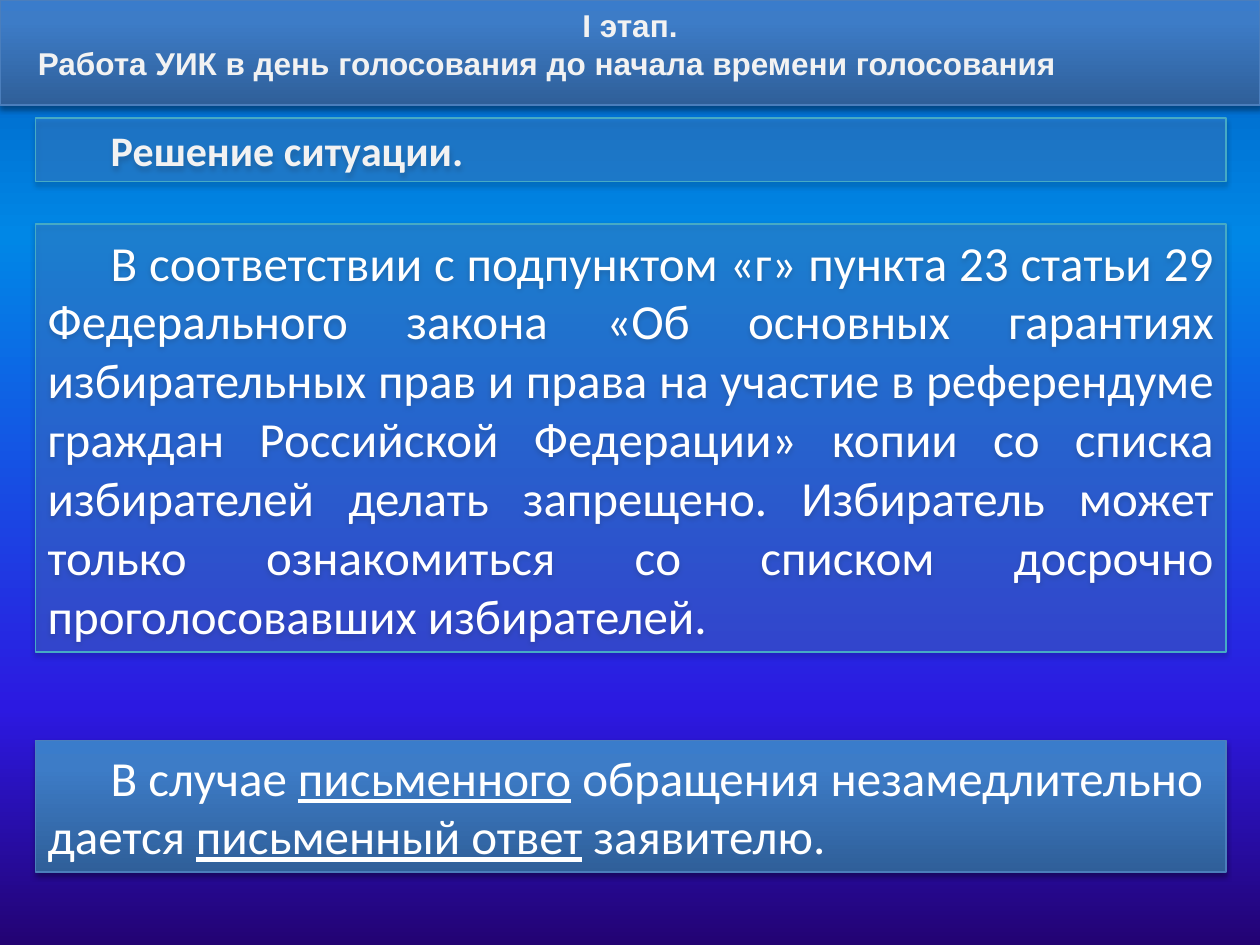
from dataclasses import dataclass

from lxml.etree import SubElement
from pptx import Presentation
from pptx.dml.color import RGBColor
from pptx.enum.shapes import MSO_SHAPE
from pptx.enum.text import MSO_ANCHOR, MSO_AUTO_SIZE, PP_ALIGN
from pptx.oxml.ns import qn
from pptx.util import Emu, Inches, Pt

COLORS = {
    "white": "FFFFFF", "pale": "F2F2F2", "shadow": "000000",
    "glass": "558ED5", "glass_line": "46AAC5", "solid_line": "4B7EBC",
}
BACKGROUND = [(0, "230373"), (25, "2C19E1"), (75, "0087E6"), (100, "005CBF")]
PANEL = [(0, "2F5F99"), (80, "3D7CC7"), (100, "3A7CCB")]
WIDTH, HEIGHT = Inches(10), Inches(7.5)
LEFT, SPAN = 2.8, 94.5  # text panels, percent of slide width

HEADING = {"size": Pt(18), "name": "Arial", "bold": True}
LEAD = {"size": Pt(24), "name": "Calibri", "bold": True}
BODY = {"size": Pt(28), "name": "Calibri", "bold": False}


@dataclass
class Line:
    """A paragraph; every second piece of text is underlined."""
    pieces: list[str]
    align: PP_ALIGN
    margin: float = 0
    indent: float = 0


@dataclass
class Panel:
    """A framed text; top and height are percent of slide height."""
    top: float
    height: float
    lines: list[Line]
    font: dict
    color: str
    glass: bool
    left: float = LEFT
    width: float = SPAN


TITLE = Panel(0, 9.47, [
    Line(["I этап."], PP_ALIGN.CENTER),
    Line(["Работа УИК в день голосования до начала времени голосования"],
         PP_ALIGN.LEFT, margin=0.2),
], HEADING, "pale", glass=False, left=0, width=100)

PANELS = [
    Panel(23.7, 45.3, [Line([
        "В соответствии с подпунктом «г» пункта 23 статьи 29 Федерального "
        "закона «Об основных гарантиях избирательных прав и права на участие "
        "в референдуме граждан Российской Федерации» копии со списка "
        "избирателей делать запрещено. Избиратель может только ознакомиться "
        "со списком досрочно проголосовавших избирателей."],
        PP_ALIGN.JUSTIFY, indent=0.5)], BODY, "white", glass=True),
    Panel(78.4, 13.9, [Line([
        "В случае ", "письменного", " обращения незамедлительно дается ",
        "письменный ответ", " заявителю."],
        PP_ALIGN.LEFT, indent=0.5)], BODY, "white", glass=False),
    Panel(12.5, 6.7, [Line(["Решение ситуации."], PP_ALIGN.JUSTIFY, indent=0.5)],
          LEAD, "pale", glass=True),
]


def rgb(name: str) -> RGBColor:
    return RGBColor.from_string(COLORS[name])


def add_color(parent, value: str, alpha: int | None = None) -> None:
    clr = SubElement(parent, qn("a:srgbClr"), val=value)
    if alpha is not None:
        SubElement(clr, qn("a:alpha"), val=str(alpha * 1000))


def fill_gradient(fill, root, stops: list[tuple[int, str]]) -> None:
    """Fill upwards with the stops; root is the element that holds the fill."""
    fill.solid()
    solid = root.find(".//" + qn("a:solidFill"))
    grad = solid.makeelement(qn("a:gradFill"), {"rotWithShape": "1"})
    stop_list = SubElement(grad, qn("a:gsLst"))
    for position, value in stops:
        add_color(SubElement(stop_list, qn("a:gs"), pos=str(position * 1000)), value)
    SubElement(grad, qn("a:lin"), ang=str(270 * 60000), scaled="0")
    solid.getparent().replace(solid, grad)


def fill_glass(sp) -> None:
    sp.fill.solid()
    sp.fill.fore_color.rgb = rgb("glass")
    clr = sp._element.spPr.find(qn("a:solidFill"))[0]
    SubElement(clr, qn("a:alpha"), val="33000")


def add_shadow(sp) -> None:
    sp.shadow.inherit = False
    effects = sp._element.spPr.find(qn("a:effectLst"))
    shadow = SubElement(effects, qn("a:outerShdw"), blurRad=str(Pt(3.1)),
                        dist=str(Pt(1.8)), dir=str(90 * 60000), rotWithShape="0")
    add_color(shadow, COLORS["shadow"], 35)


def write_line(p, line: Line, panel: Panel) -> None:
    p.alignment = line.align
    pPr = p._p.get_or_add_pPr()
    pPr.set("marL", str(Inches(line.margin)))
    pPr.set("indent", str(Inches(line.indent)))
    for i, piece in enumerate(line.pieces):
        r = p.add_run()
        r.text = piece
        for key, value in panel.font.items():
            setattr(r.font, key, value)
        r.font.underline = i % 2 == 1
        r.font.color.rgb = rgb(panel.color)


def format_panel(sp, panel: Panel) -> None:
    box = {
        "left": Emu(int(WIDTH * panel.left / 100)),
        "top": Emu(int(HEIGHT * panel.top / 100)),
        "width": Emu(int(WIDTH * panel.width / 100)),
        "height": Emu(int(HEIGHT * panel.height / 100)),
    }
    for key, value in box.items():
        setattr(sp, key, value)
    if panel.glass:
        fill_glass(sp)
    else:
        fill_gradient(sp.fill, sp._element.spPr, PANEL)
    sp.line.color.rgb = rgb("glass_line" if panel.glass else "solid_line")
    sp.line.width = Pt(0.75)
    add_shadow(sp)
    tf = sp.text_frame
    frame = {
        "word_wrap": True,
        "auto_size": MSO_AUTO_SIZE.SHAPE_TO_FIT_TEXT,
        "vertical_anchor": MSO_ANCHOR.MIDDLE if panel.glass else MSO_ANCHOR.TOP,
    }
    for key, value in frame.items():
        setattr(tf, key, value)
    for i, line in enumerate(panel.lines):
        write_line(tf.add_paragraph() if i else tf.paragraphs[0], line, panel)


def main() -> None:
    prs = Presentation()
    prs.slide_width, prs.slide_height = WIDTH, HEIGHT
    s = prs.slides.add_slide(prs.slide_layouts[5])
    fill_gradient(s.background.fill, s._element, BACKGROUND)
    format_panel(s.shapes.title, TITLE)
    for panel in PANELS:
        format_panel(s.shapes.add_shape(MSO_SHAPE.RECTANGLE, 0, 0, 0, 0), panel)
    prs.save("out.pptx")


if __name__ == "__main__":
    main()
